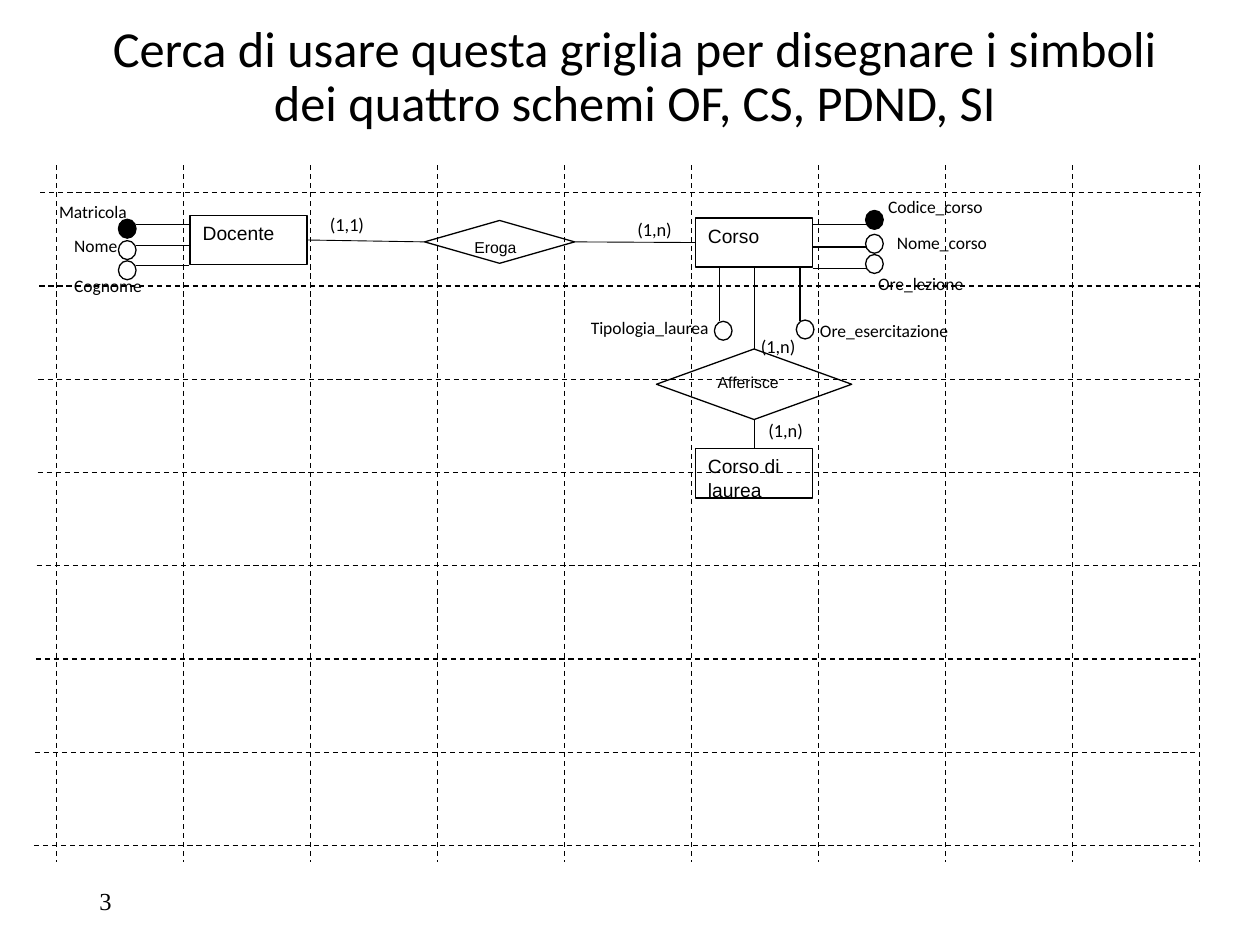
from lxml import etree
from pptx import Presentation
from pptx.dml.color import RGBColor
from pptx.enum.dml import MSO_LINE
from pptx.enum.shapes import MSO_CONNECTOR, MSO_SHAPE
from pptx.enum.text import MSO_ANCHOR, MSO_AUTO_SIZE, PP_ALIGN
from pptx.oxml.ns import qn
from pptx.util import Inches, Pt

RECTANGLE, DIAMOND, OVAL = MSO_SHAPE.RECTANGLE, MSO_SHAPE.DIAMOND, MSO_SHAPE.OVAL
STRAIGHT, DASH = MSO_CONNECTOR.STRAIGHT, MSO_LINE.DASH
TOP, MIDDLE = MSO_ANCHOR.TOP, MSO_ANCHOR.MIDDLE
LEFT, CENTER = PP_ALIGN.LEFT, PP_ALIGN.CENTER
FIT_SHAPE, NO_FIT = MSO_AUTO_SIZE.SHAPE_TO_FIT_TEXT, MSO_AUTO_SIZE.NONE
TOP_SIDE, LEFT_SIDE, BOTTOM_SIDE, RIGHT_SIDE = range(4)
BLACK = "000000"

TITLE = "Cerca di usare questa griglia per disegnare i simboli\vdei quattro schemi OF, CS, PDND, SI"
PAGE_NUMBER = "3"

ENTITY_SIZE = (0.93, 0.39)
ENTITIES = [("Docente", 1.51, 1.71), ("Corso", 5.52, 1.73), ("Corso di laurea", 5.52, 3.56)]
RELATIONS = [("Eroga", 3.37, 1.75, 1.19, 0.34), ("Afferisce", 5.21, 2.77, 1.55, 0.56)]
LINKS = [
    ("Eroga", LEFT_SIDE, "Docente", RIGHT_SIDE),
    ("Eroga", RIGHT_SIDE, "Corso", LEFT_SIDE),
    ("Afferisce", TOP_SIDE, "Corso", BOTTOM_SIDE),
    ("Corso di laurea", TOP_SIDE, "Afferisce", BOTTOM_SIDE),
]
CARDINALITIES = [("(1,1)", 2.52, 1.64), ("(1,n)", 4.96, 1.68), ("(1,n)", 6, 3.28), ("(1,n)", 5.94, 2.61)]

CIRCLE_SIZE = (0.14, 0.15)
# label box, circle corner, stem start, stem end
ATTRIBUTES = [
    ("Matricola", (0.37, 1.55, 0.75), (0.94, 1.74), (1.5, 1.78), (1.08, 1.78), True),
    ("Nome", (0.49, 1.82, 0.55), (0.94, 1.91), (1.5, 1.95), (1.08, 1.95), False),
    ("Cognome", (0.49, 2.13, 0.75), (0.94, 2.07), (1.5, 2.11), (1.08, 2.11), False),
    ("Codice_corso", (6.95, 1.51, 0.97), (6.87, 1.67), (6.45, 1.78), (6.87, 1.78), True),
    ("Nome_corso", (7.02, 1.79, 0.93), (6.87, 1.86), (6.45, 1.96), (6.87, 1.96), False),
    ("Ore_lezione", (6.87, 2.12, 0.89), (6.87, 2.02), (6.45, 2.13), (6.87, 2.13), False),
    ("Tipologia_laurea", (4.59, 2.47, 1.15), (5.67, 2.55), (5.71, 2.13), (5.71, 2.55), False),
    ("Ore_esercitazione", (6.41, 2.49, 1.24), (6.32, 2.54), (6.35, 2.13), (6.35, 2.55), False),
]

GRID_ROWS, GRID_COLUMNS = 8, 10
FIRST_ROW, ROW_STEP = 1.53, 0.74
FIRST_COLUMN, LAST_COLUMN = 0.45, 9.52
COLUMN_TOP, COLUMN_BOTTOM = 1.31, 6.84
ROW_LEFT, ROW_WIDTH, ROW_DRIFT = 0.32, 9.21, 0.05


def color(value):
    return RGBColor.from_string(value)


def write(shape, text, font, size, anchor=TOP, align=LEFT):
    frame = shape.text_frame
    frame.text = text
    frame.vertical_anchor = anchor
    for para in frame.paragraphs:
        para.alignment = align
        for span in para.runs:
            span.font.name = font
            span.font.size = Pt(size)
            span.font.color.rgb = color(BLACK)


def add_label(page, text, left, top, width, height, size, font="Calibri", wrap=False, anchor=TOP):
    box = page.shapes.add_textbox(*map(Inches, (left, top, width, height)))
    write(box, text, font, size, anchor)
    box.text_frame.word_wrap = wrap
    box.text_frame.auto_size = NO_FIT if wrap else FIT_SHAPE


def add_symbol(page, kind, left, top, width, height, weight=0.75, fill=None):
    shape = page.shapes.add_shape(kind, *map(Inches, (left, top, width, height)))
    shape.shadow.inherit = False
    if fill:
        shape.fill.solid()
        shape.fill.fore_color.rgb = color(fill)
    else:
        shape.fill.background()
    shape.line.color.rgb = color(BLACK)
    shape.line.width = Pt(weight)
    return shape


def add_line(page, start, end, weight=0.75, dash=None):
    line = page.shapes.add_connector(STRAIGHT, *map(Inches, (*start, *end)))
    line.line.color.rgb = color(BLACK)
    line.line.width = Pt(weight)
    if dash:
        line.line.dash_style = dash
    etree.SubElement(line._element.spPr, qn("a:effectLst"))
    return line


def add_grid(page):
    for row in range(GRID_ROWS):
        left = ROW_LEFT - ROW_DRIFT * row / (GRID_ROWS - 1)
        y = FIRST_ROW + ROW_STEP * row
        add_line(page, (left, y), (left + ROW_WIDTH, y), dash=DASH)
    step = (LAST_COLUMN - FIRST_COLUMN) / (GRID_COLUMNS - 1)
    for column in range(GRID_COLUMNS):
        x = FIRST_COLUMN + step * column
        add_line(page, (x, COLUMN_TOP), (x, COLUMN_BOTTOM), dash=DASH)


def add_schema(page):
    nodes = {}
    for name, left, top in ENTITIES:
        nodes[name] = add_symbol(page, RECTANGLE, left, top, *ENTITY_SIZE, weight=1)
        write(nodes[name], name, "Arial", 11)
    for name, *place in RELATIONS:
        nodes[name] = add_symbol(page, DIAMOND, *place)
        write(nodes[name], name, "Arial", 9)
    for source, source_side, target, target_side in LINKS:
        link = add_line(page, (0, 0), (1, 1), weight=0.5)
        link.begin_connect(nodes[source], source_side)
        link.end_connect(nodes[target], target_side)
    for text, left, top in CARDINALITIES:
        add_label(page, text, left, top, 0.48, 0.28, 10.5)
    for name, (left, top, width), corner, start, end, is_key in ATTRIBUTES:
        add_line(page, start, end)
        add_symbol(page, OVAL, *corner, *CIRCLE_SIZE, fill=BLACK if is_key else None)
        add_label(page, name, left, top, width, 0.27, 10)


def main():
    deck = Presentation()
    deck.slide_width, deck.slide_height = Inches(10), Inches(7.5)
    page = deck.slides.add_slide(deck.slide_layouts[5])
    title = page.shapes.title
    title.left, title.top, title.width, title.height = map(Inches, (0.27, 0.22, 9.54, 0.8))
    write(title, TITLE, "Calibri", 28.8, MIDDLE, CENTER)
    title.text_frame.auto_size = NO_FIT
    title.text_frame.paragraphs[0].line_spacing = 0.9
    add_label(page, PAGE_NUMBER, 0.69, 6.95, 2.25, 0.4, 14, "Times New Roman", True, MIDDLE)
    add_grid(page)
    add_schema(page)
    deck.save("out.pptx")


if __name__ == "__main__":
    main()
